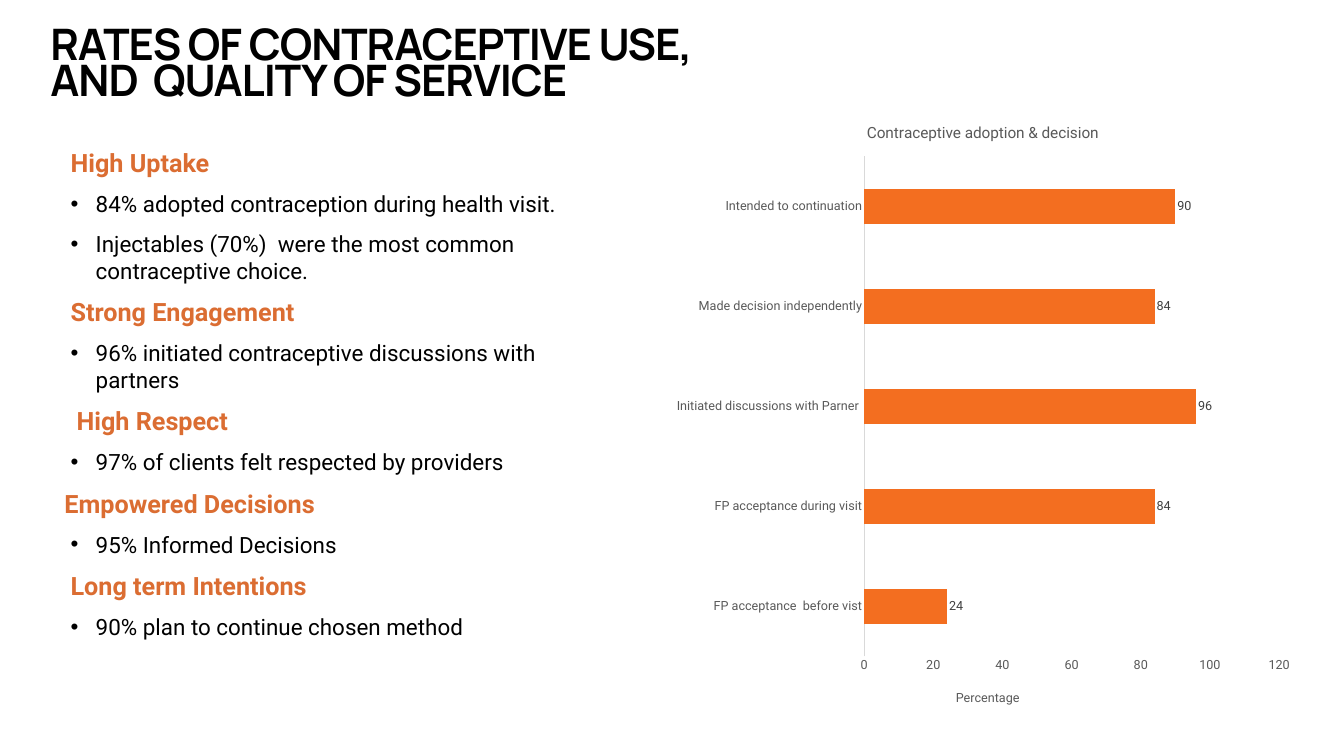
from dataclasses import dataclass

from lxml import etree
from pptx import Presentation
from pptx.chart.data import CategoryChartData
from pptx.dml.color import RGBColor
from pptx.enum import chart as ch, text
from pptx.oxml import parse_xml
from pptx.oxml.ns import nsdecls, qn
from pptx.util import Inches, Pt

BLACK = RGBColor(0x00, 0x00, 0x00)
HEADING = RGBColor(0xDB, 0x6D, 0x32)
BAR = RGBColor(0xF3, 0x6E, 0x20)
GREY = RGBColor(0x59, 0x59, 0x59)
LABEL = RGBColor(0x40, 0x40, 0x40)
AXIS_LINE = RGBColor(0xD9, 0xD9, 0xD9)


@dataclass
class Finding:
    heading: str
    bullets: list[str]
    indent: float = 0.12


FINDINGS = [
    Finding("High Uptake", [
        "84% adopted contraception during health visit.",
        "Injectables (70%)  were the most common contraceptive choice."]),
    Finding("Strong Engagement", ["96% initiated contraceptive discussions with partners"]),
    Finding("High Respect", ["97% of clients felt respected by providers"], 0.24),
    Finding("Empowered Decisions", ["95% Informed Decisions"], 0),
    Finding("Long term Intentions", ["90% plan to continue chosen method"]),
]

RATES = {
    "FP acceptance  before vist": 24,
    "FP acceptance during visit": 84,
    "Initiated discussions with Parner ": 96,
    "Made decision independently": 84,
    "Intended to continuation": 90,
}


def style_font(font, size: float, color: RGBColor, bold: bool = False,
               name: str = "Roboto") -> None:
    font.name, font.size, font.bold = name, Pt(size), bold
    font.color.rgb = color


def add_frame(page, left: float, top: float, width: float, height: float):
    box = page.shapes.add_textbox(Inches(left), Inches(top), Inches(width), Inches(height))
    frame = box.text_frame
    frame.word_wrap = True
    frame.margin_left = frame.margin_right = Inches(0.2)
    frame.margin_top = frame.margin_bottom = Inches(0.1)
    return frame


def add_line(frame, words: str, size: float, color: RGBColor, left: float,
             bullet: bool = False) -> None:
    first = frame.paragraphs[0]
    para = first if not first.runs else frame.add_paragraph()
    para.space_after = Pt(18)
    props = para._p.get_or_add_pPr()
    props.set("marL", str(Inches(left)))
    props.set("indent", str(Inches(-0.5 if bullet else 0)))
    if bullet:
        etree.SubElement(props, qn("a:buFont")).set("typeface", "Arial")
        etree.SubElement(props, qn("a:buChar")).set("char", "•")
    span = para.add_run()
    span.text = words
    style_font(span.font, size, color, bold=not bullet)


def place(element, left: float, top: float, width: float = 0, height: float = 0) -> None:
    """Set a manual layout, in fractions of the chart area."""
    old = element.find(qn("c:layout"))
    if old is not None:
        element.remove(old)
    target = '<c:layoutTarget val="inner"/>' if width else ""
    size = f'<c:w val="{width}"/><c:h val="{height}"/>' if width else ""
    layout = parse_xml(
        f'<c:layout {nsdecls("c")}><c:manualLayout>{target}'
        f'<c:xMode val="edge"/><c:yMode val="edge"/>'
        f'<c:x val="{left}"/><c:y val="{top}"/>{size}</c:manualLayout></c:layout>')
    words = element.find(qn("c:tx"))
    element.insert(0 if words is None else 1, layout)


def add_chart_title(title, words: str, size: float, left: float, top: float) -> None:
    span = title.text_frame.paragraphs[0].add_run()
    span.text = words
    style_font(span.font, size, GREY)
    place(title._element, left, top)


def add_title(page) -> None:
    frame = add_frame(page, 0.8, 0.41, 13.34, 1.86)
    frame.vertical_anchor = text.MSO_ANCHOR.MIDDLE
    para = frame.paragraphs[0]
    para.line_spacing = 0.7
    span = para.add_run()
    span.text = "RATES OF CONTRACEPTIVE USE, AND  QUALITY OF SERVICE"
    style_font(span.font, 62, BLACK, True, "Manrope")
    span._r.get_or_add_rPr().set("spc", "-150")


def add_findings(page) -> None:
    frame = add_frame(page, 1.08, 2.83, 11.25, 10.07)
    for finding in FINDINGS:
        add_line(frame, finding.heading, 36, HEADING, finding.indent)
        for bullet in finding.bullets:
            add_line(frame, bullet, 32, BLACK, 0.62, bullet=True)


def add_rates_chart(page) -> None:
    data = CategoryChartData()
    data.categories = list(RATES)
    data.add_series("Series 1", list(RATES.values()))
    chart = page.shapes.add_chart(
        ch.XL_CHART_TYPE.BAR_CLUSTERED, Inches(13.22), Inches(2),
        Inches(12.67), Inches(12.25), data).chart
    style_font(chart.font, 18, BLACK)
    chart.has_legend = False
    chart.has_title = True
    add_chart_title(chart.chart_title, "Contraceptive adoption & decision", 22, 0.31, 0.03)

    # Axes
    for axis in (chart.category_axis, chart.value_axis):
        axis.has_major_gridlines = False
        axis.major_tick_mark = axis.minor_tick_mark = ch.XL_TICK_MARK.NONE
        style_font(axis.tick_labels.font, 18, GREY)
    chart.category_axis.format.line.color.rgb = AXIS_LINE
    chart.category_axis.format.line.width = Pt(0.75)
    values = chart.value_axis
    values.format.line.fill.background()
    values.minimum_scale, values.maximum_scale, values.major_unit = 0, 120, 20
    add_chart_title(values.axis_title, "Percentage", 18, 0.45, 0.95)

    # Bars and their labels
    plot = chart.plots[0]
    plot.gap_width = 182
    plot.vary_by_categories = False
    series = plot.series[0]
    series.format.fill.solid()
    series.format.fill.fore_color.rgb = BAR
    labels = series.data_labels
    labels.show_value = True
    labels.position = ch.XL_LABEL_POSITION.OUTSIDE_END
    style_font(labels.font, 18, LABEL)
    place(chart._chartSpace.chart.plotArea, 0.31, 0.09, 0.65, 0.81)


def main() -> None:
    deck = Presentation()
    deck.slide_width, deck.slide_height = Inches(26.67), Inches(15)
    page = deck.slides.add_slide(deck.slide_layouts[6])
    add_title(page)
    add_findings(page)
    add_rates_chart(page)
    deck.save("out.pptx")


if __name__ == "__main__":
    main()
